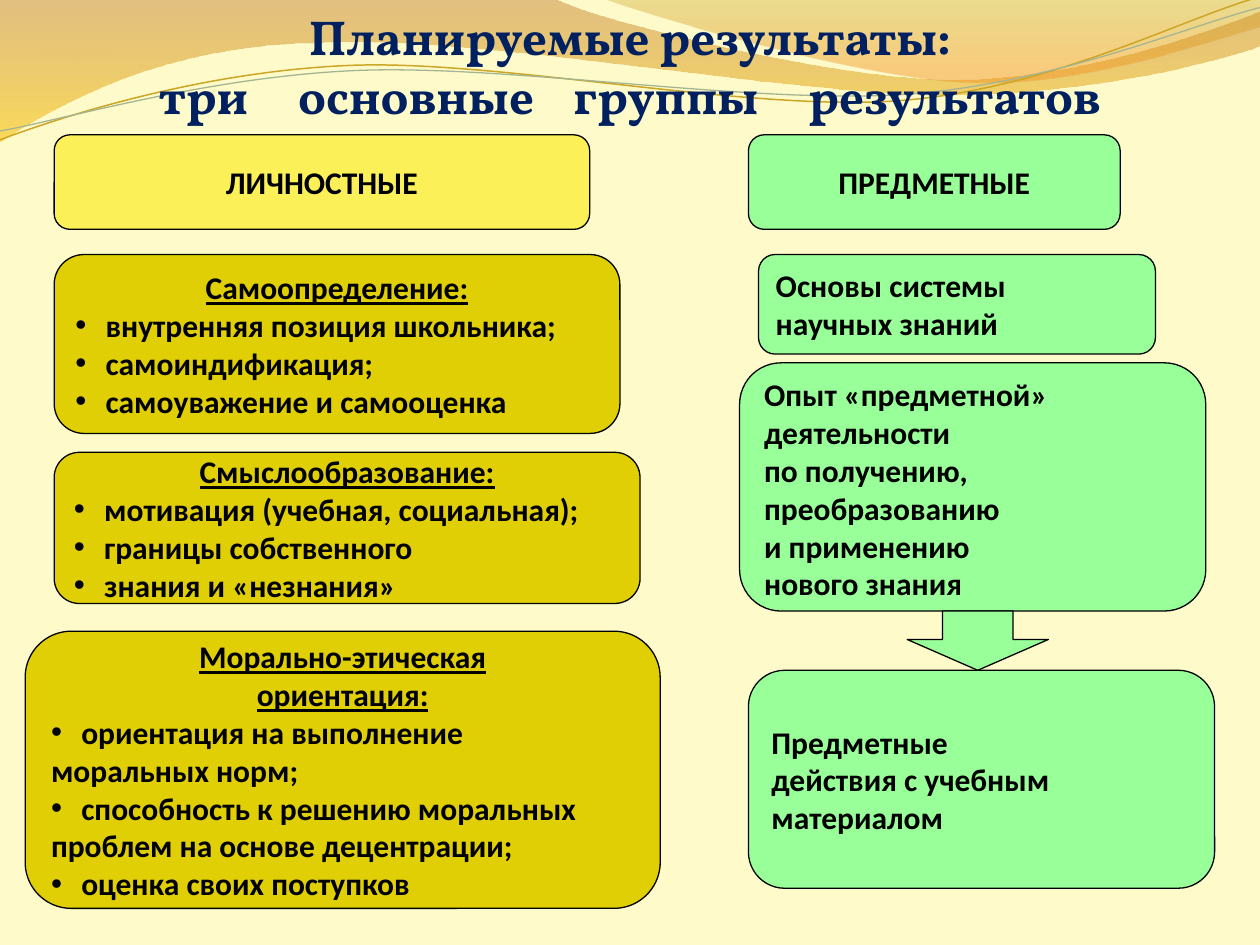
from lxml import etree
from pptx import Presentation
from pptx.dml.color import RGBColor
from pptx.enum.shapes import MSO_SHAPE
from pptx.enum.text import MSO_ANCHOR, MSO_AUTO_SIZE, PP_ALIGN
from pptx.oxml.ns import qn
from pptx.util import Inches, Pt

ROUNDED, ARROW = MSO_SHAPE.ROUNDED_RECTANGLE, MSO_SHAPE.DOWN_ARROW
TOP, MIDDLE = MSO_ANCHOR.TOP, MSO_ANCHOR.MIDDLE
LEFT, CENTER = PP_ALIGN.LEFT, PP_ALIGN.CENTER
NO_AUTOFIT = MSO_AUTO_SIZE.NONE

CREAM = RGBColor(0xFE, 0xFA, 0xC9)
NAVY = RGBColor(0x00, 0x20, 0x60)
BLACK = RGBColor(0x00, 0x00, 0x00)
YELLOW = RGBColor(0xFC, 0xF0, 0x59)
MUSTARD = RGBColor(0xDF, 0xCF, 0x04)
GREEN = RGBColor(0x99, 0xFF, 0x99)
BROWN = RGBColor(0xC0, 0x7A, 0x28)
AMBER = RGBColor(0xF7, 0xBF, 0x00)
OCHRE = RGBColor(0xC0, 0x97, 0x09)
ORANGE = RGBColor(0xF5, 0x93, 0x20)
GOLD = RGBColor(0xCC, 0xA6, 0x24)
SAGE = RGBColor(0xA5, 0xB5, 0x92)

HANGING = Inches(0.24)
CAPTION, HEADING, BULLET, PLAIN = "caption", "heading", "bullet", "plain"

BANDS = [
    ((0, -0.01),
     [[(4.4, -0.01)],
      [(4.76, 0.17), (6.64, 0.63), (7.58, 0.63)],
      [(8.53, 0.63), (9.58, 0.26), (10, 0.09)],
      [(10.01, 0.36)],
      [(9.83, 0.44), (8.7, 0.76), (7.46, 0.75)],
      [(6.22, 0.75), (3.82, 0.28), (2.57, 0.34)],
      [(1.29, 0.35), (0.46, 0.83), (-0.01, 1.13)]],
     [(0, BROWN, 45), (1, AMBER, 55)]),
    ((4.79, -0.01),
     [[(5.09, 0.11), (6.82, 0.62), (7.69, 0.65)],
      [(8.56, 0.69), (9.61, 0.32), (10, 0.21)],
      [(10, 0)]],
     [(0, OCHRE, 30), (0.8, ORANGE, 45)]),
]
WAVES = [
    ((0, 1.11),
     [[(0.48, 0.93), (1.58, 0.57), (2.77, 0.52)],
      [(3.95, 0.47), (5.93, 0.89), (7.13, 0.8)],
      [(8.33, 0.71), (9.38, 0.15), (9.98, -0.02)]],
     GOLD, 0.85),
    ((0, 1.04),
     [[(0.47, 0.96), (1.64, 0.61), (2.83, 0.56)],
      [(4.03, 0.51), (5.97, 0.83), (7.17, 0.75)],
      [(8.36, 0.67), (9.41, 0.21), (10, 0.06)]],
     SAGE, 0.75),
]
BOXES = [
    ((0.43, 1.07, 4.25, 0.75), YELLOW, [(CAPTION, "ЛИЧНОСТНЫЕ")]),
    ((5.94, 1.07, 2.95, 0.75), GREEN, [(CAPTION, "ПРЕДМЕТНЫЕ")]),
    ((0.43, 2.02, 4.49, 1.42), MUSTARD,
     [(HEADING, "Самоопределение:"),
      (BULLET, "внутренняя позиция школьника;"),
      (BULLET, "самоиндификация;"),
      (BULLET, "самоуважение и самооценка")]),
    ((0.43, 3.59, 4.65, 1.2), MUSTARD,
     [(HEADING, "Смыслообразование:"),
      (BULLET, "мотивация (учебная, социальная);"),
      (BULLET, "границы собственного"),
      (BULLET, "знания и «незнания»")]),
    ((0.2, 5.01, 5.04, 2.2), MUSTARD,
     [(HEADING, "Морально-этическая"),
      (HEADING, "ориентация:"),
      (BULLET, "ориентация на выполнение"),
      (PLAIN, "моральных норм;"),
      (BULLET, "способность к решению моральных"),
      (PLAIN, "проблем на основе децентрации;"),
      (BULLET, "оценка своих поступков")]),
    ((6.02, 2.02, 3.15, 0.79), GREEN,
     [(PLAIN, "Основы системы"), (PLAIN, "научных знаний")]),
    ((5.87, 2.88, 3.7, 1.97), GREEN,
     [(PLAIN, "Опыт «предметной»"), (PLAIN, "деятельности"),
      (PLAIN, "по получению,"), (PLAIN, "преобразованию"),
      (PLAIN, "и применению"), (PLAIN, "нового знания")], 0.08),
    ((5.94, 5.32, 3.7, 1.73), GREEN,
     [(PLAIN, "Предметные \nдействия с учебным"), (PLAIN, "материалом")]),
]


def add_outline(slide, start, segments, close):
    """Add a freeform whose three-point segments are Bézier curves."""
    points = [tuple(map(Inches, point)) for segment in segments for point in segment]
    builder = slide.shapes.build_freeform(*map(Inches, start))
    builder.add_line_segments(points, close=close)
    shape = builder.convert_to_shape()
    shape.shadow.inherit = False
    lines = iter(list(shape._element.iter(qn("a:lnTo"))))
    for segment in segments:
        first, *others = [next(lines) for _ in segment]
        if others:
            first.tag = qn("a:cubicBezTo")
            for line in others:
                first.append(line[0])
                line.getparent().remove(line)
    return shape


def add_band(slide, start, segments, stops):
    """Add a translucent band with a downward gradient."""
    band = add_outline(slide, start, segments, True)
    band.line.fill.background()
    band.fill.gradient()
    band.fill.gradient_angle = 270
    nodes = band._element.iter(qn("a:gs"))
    for stop, node, (position, color, opacity) in zip(band.fill.gradient_stops, nodes, stops):
        stop.position = position
        stop.color.rgb = color
        etree.SubElement(node[0], qn("a:alpha"), val=str(opacity * 1000))


def add_wave(slide, start, segments, color, width):
    """Add a thin curved line."""
    wave = add_outline(slide, start, segments, False)
    wave.fill.background()
    wave.line.color.rgb = color
    wave.line.width = Pt(width)


def add_run(para, text, font, size, color):
    """Add a bold run and return it."""
    span = para.add_run()
    span.text = text
    span.font.name, span.font.size, span.font.bold = font, Pt(size), True
    span.font.color.rgb = color
    return span


def add_bullet(para):
    """Give a paragraph a hanging bullet."""
    properties = para._p.get_or_add_pPr()
    properties.set("marL", str(HANGING))
    properties.set("indent", str(-HANGING))
    etree.SubElement(properties, qn("a:buFont"), typeface="Arial")
    etree.SubElement(properties, qn("a:buChar"), char="•")


def add_filled_shape(slide, kind, place, color):
    """Add a preset shape with a thin black outline."""
    shape = slide.shapes.add_shape(kind, *map(Inches, place))
    shape.shadow.inherit = False
    shape.fill.solid()
    shape.fill.fore_color.rgb = color
    shape.line.color.rgb = BLACK
    shape.line.width = Pt(0.75)
    return shape


def add_box(slide, place, color, lines, top_inset=0.05):
    """Add a rounded box with one paragraph for each entry."""
    frame = add_filled_shape(slide, ROUNDED, place, color).text_frame
    frame.word_wrap = True
    frame.vertical_anchor = MIDDLE
    frame.margin_top = Inches(top_inset)
    for index, (style, text) in enumerate(lines):
        para = frame.add_paragraph() if index else frame.paragraphs[0]
        para.alignment = CENTER if style in (CAPTION, HEADING) else LEFT
        if style == BULLET:
            add_bullet(para)
        for row, part in enumerate(text.split("\n")):
            if row:
                para.add_line_break()
            span = add_run(para, part, "Calibri", 18, BLACK)
            if style == HEADING:
                span.font.underline = True


def set_title(slide):
    """Fill the title, widening the gaps between words by letter spacing."""
    title = slide.shapes.title
    title.left, title.top, title.width, title.height = map(Inches, (0, 0, 10, 1.04))
    slide.shapes._spTree.append(title._element)
    frame = title.text_frame
    frame.auto_size, frame.vertical_anchor = NO_AUTOFIT, TOP
    lines = [[("Планируемые результаты:", 0)],
             [("три", 23), ("основные", 17), ("группы", 23), ("результатов", 0)]]
    for index, words in enumerate(lines):
        para = frame.add_paragraph() if index else frame.paragraphs[0]
        para.alignment = CENTER
        for word, gap in words:
            add_run(para, word, "Vollkorn", 28, NAVY)
            if gap:
                space = add_run(para, " ", "Vollkorn", 28, NAVY)
                space._r.get_or_add_rPr().set("spc", str(gap * 100))


def main():
    """Build the slide and save the deck."""
    deck = Presentation()
    deck.slide_width, deck.slide_height = Inches(10), Inches(7.5)
    slide = deck.slides.add_slide(deck.slide_layouts[5])
    slide.background.fill.solid()
    slide.background.fill.fore_color.rgb = CREAM
    for band in BANDS:
        add_band(slide, *band)
    for wave in WAVES:
        add_wave(slide, *wave)
    for box in BOXES:
        add_box(slide, *box)
    arrow = add_filled_shape(slide, ARROW, (7.2, 4.85, 1.12, 0.47), GREEN)
    arrow.adjustments[1] = 0.52
    set_title(slide)
    deck.save("out.pptx")


if __name__ == "__main__":
    main()
